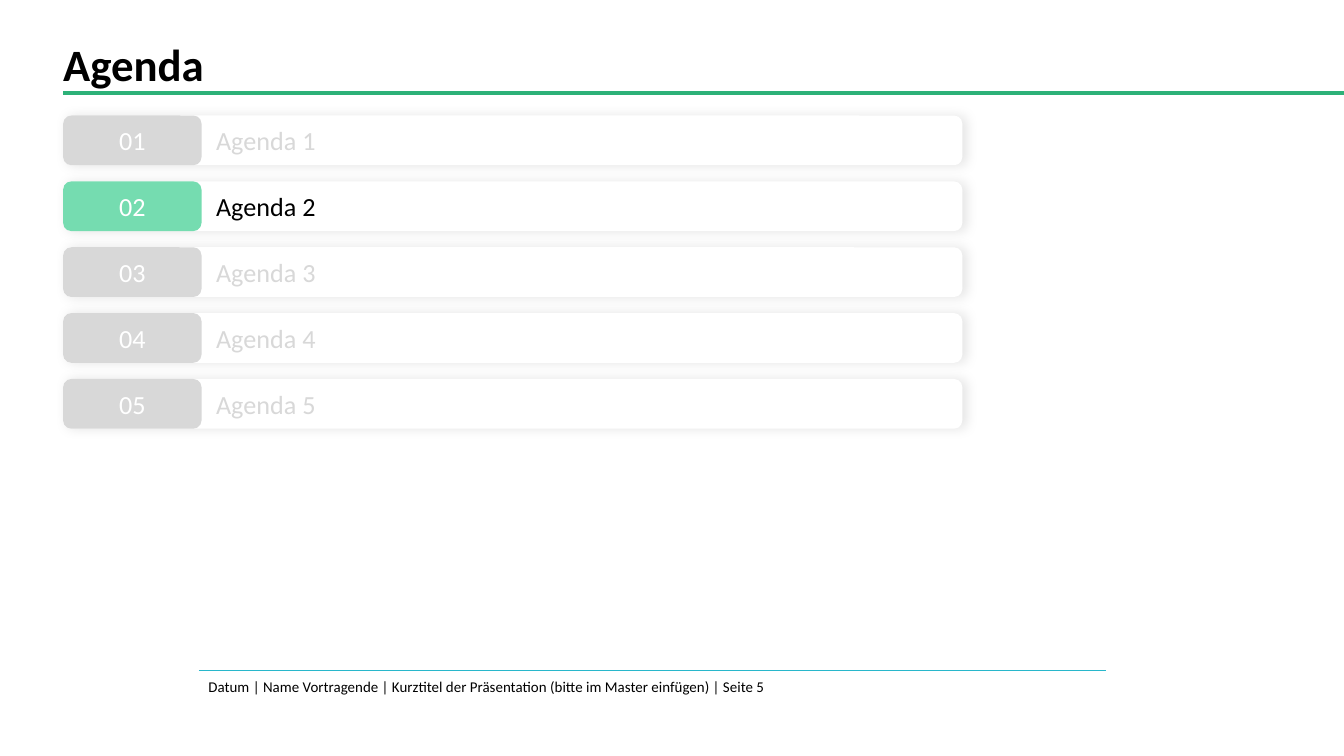
import dataclasses

import pptx
import pptx.dml.color
import pptx.enum.shapes
import pptx.enum.text
import pptx.oxml
import pptx.oxml.ns
import pptx.util

Inches = pptx.util.Inches
Align = pptx.enum.text.PP_ALIGN
Anchor = pptx.enum.text.MSO_ANCHOR


@dataclasses.dataclass(frozen=True)
class Theme:
    font: str = "Calibri"
    title_size: int = 24
    item_size: int = 14
    footer_size: int = 8
    black: str = "000000"
    white: str = "FFFFFF"
    muted: str = "D8D8D8"
    active: str = "75DCB0"
    title_rule: str = "2DB178"
    footer_rule: str = "28B7CB"


THEME = Theme()

# Widescreen slide, 16:9
WIDTH = 10
HEIGHT = WIDTH * 9 / 16

# Agenda grid
LEFT, TOP = 0.47, 0.86
ROW_PITCH, ROW_HEIGHT = 0.49, 0.37
BAR_WIDTH, NUMBER_WIDTH = 6.69, 1.03

AGENDA = ["Agenda 1", "Agenda 2", "Agenda 3", "Agenda 4", "Agenda 5"]
ACTIVE_NUMBER = 2
FOOTER = ("Datum | Name Vortragende | Kurztitel der Präsentation "
          "(bitte im Master einfügen) | Seite 5")


def rgb(color):
    return pptx.dml.color.RGBColor.from_string(color)


def write_text(shape, text, *, size, color, bold=False, align=Align.LEFT,
               anchor=Anchor.MIDDLE, insets=(0.1, 0.05, 0.1, 0.05)):
    frame = shape.text_frame
    frame.word_wrap = True
    frame.auto_size = pptx.enum.text.MSO_AUTO_SIZE.NONE
    frame.vertical_anchor = anchor
    (frame.margin_left, frame.margin_top,
     frame.margin_right, frame.margin_bottom) = map(Inches, insets)
    paragraph = frame.paragraphs[0]
    paragraph.alignment = align
    run = paragraph.add_run()
    run.text = text
    run.font.name = THEME.font
    run.font.size = pptx.util.Pt(size)
    run.font.bold = bold
    run.font.color.rgb = rgb(color)


def add_rule(slide, left, right, top, color, width):
    rule = slide.shapes.add_connector(
        pptx.enum.shapes.MSO_CONNECTOR.STRAIGHT,
        Inches(left), Inches(top), Inches(right), Inches(top))
    rule.line.color.rgb = rgb(color)
    rule.line.width = pptx.util.Pt(width)
    rule._element.spPr.append(pptx.oxml.parse_xml(
        f"<a:effectLst {pptx.oxml.ns.nsdecls('a')}/>"))


def add_rounded_box(slide, top, width, fill):
    box = slide.shapes.add_shape(
        pptx.enum.shapes.MSO_SHAPE.ROUNDED_RECTANGLE,
        Inches(LEFT), Inches(top), Inches(width), Inches(ROW_HEIGHT))
    box.fill.solid()
    box.fill.fore_color.rgb = rgb(fill)
    box.line.fill.background()
    box.shadow.inherit = False
    return box


def add_soft_shadow(shape):
    effects = shape._element.spPr.find(pptx.oxml.ns.qn("a:effectLst"))
    blur, distance = pptx.util.Pt(6), pptx.util.Pt(2)
    effects.append(pptx.oxml.parse_xml(
        f'<a:outerShdw {pptx.oxml.ns.nsdecls("a")} blurRad="{int(blur)}" '
        f'dist="{int(distance)}" dir="0" algn="l" rotWithShape="0">'
        f'<a:srgbClr val="{THEME.black}"><a:alpha val="10000"/></a:srgbClr>'
        '</a:outerShdw>'))


def add_agenda_row(slide, number, label):
    top = TOP + (number - 1) * ROW_PITCH
    active = number == ACTIVE_NUMBER
    # White bar with the topic
    bar = add_rounded_box(slide, top, BAR_WIDTH, THEME.white)
    add_soft_shadow(bar)
    write_text(bar, label, size=THEME.item_size,
               color=THEME.black if active else THEME.muted,
               insets=(1.12, 0.05, 0.1, 0.05))
    # Number tile over its left end
    tile = add_rounded_box(slide, top, NUMBER_WIDTH,
                           THEME.active if active else THEME.muted)
    write_text(tile, f"{number:02}", size=THEME.item_size,
               color=THEME.white, align=Align.CENTER)


def add_title(slide, text):
    title = slide.shapes.title
    title.left, title.top = Inches(LEFT), Inches(0.08)
    title.width, title.height = Inches(9.17), Inches(0.59)
    write_text(title, text, size=THEME.title_size, color=THEME.black,
               bold=True, anchor=Anchor.BOTTOM, insets=(0, 0, 0, 0))
    add_rule(slide, LEFT, WIDTH, 0.69, THEME.title_rule, 2)


def add_footer(slide, text):
    box = slide.shapes.add_textbox(
        Inches(1.55), Inches(5.04), Inches(5.81), Inches(0.27))
    write_text(box, text, size=THEME.footer_size, color=THEME.black,
               anchor=Anchor.TOP, insets=(0, 0, 0, 0))
    add_rule(slide, 1.48, 8.23, 4.99, THEME.footer_rule, 0.5)


def main():
    presentation = pptx.Presentation()
    presentation.slide_width = Inches(WIDTH)
    presentation.slide_height = Inches(HEIGHT)
    slide = presentation.slides.add_slide(presentation.slide_layouts[5])

    add_footer(slide, FOOTER)
    add_title(slide, "Agenda")
    for number, label in enumerate(AGENDA, start=1):
        add_agenda_row(slide, number, label)

    presentation.save("out.pptx")


if __name__ == "__main__":
    main()
